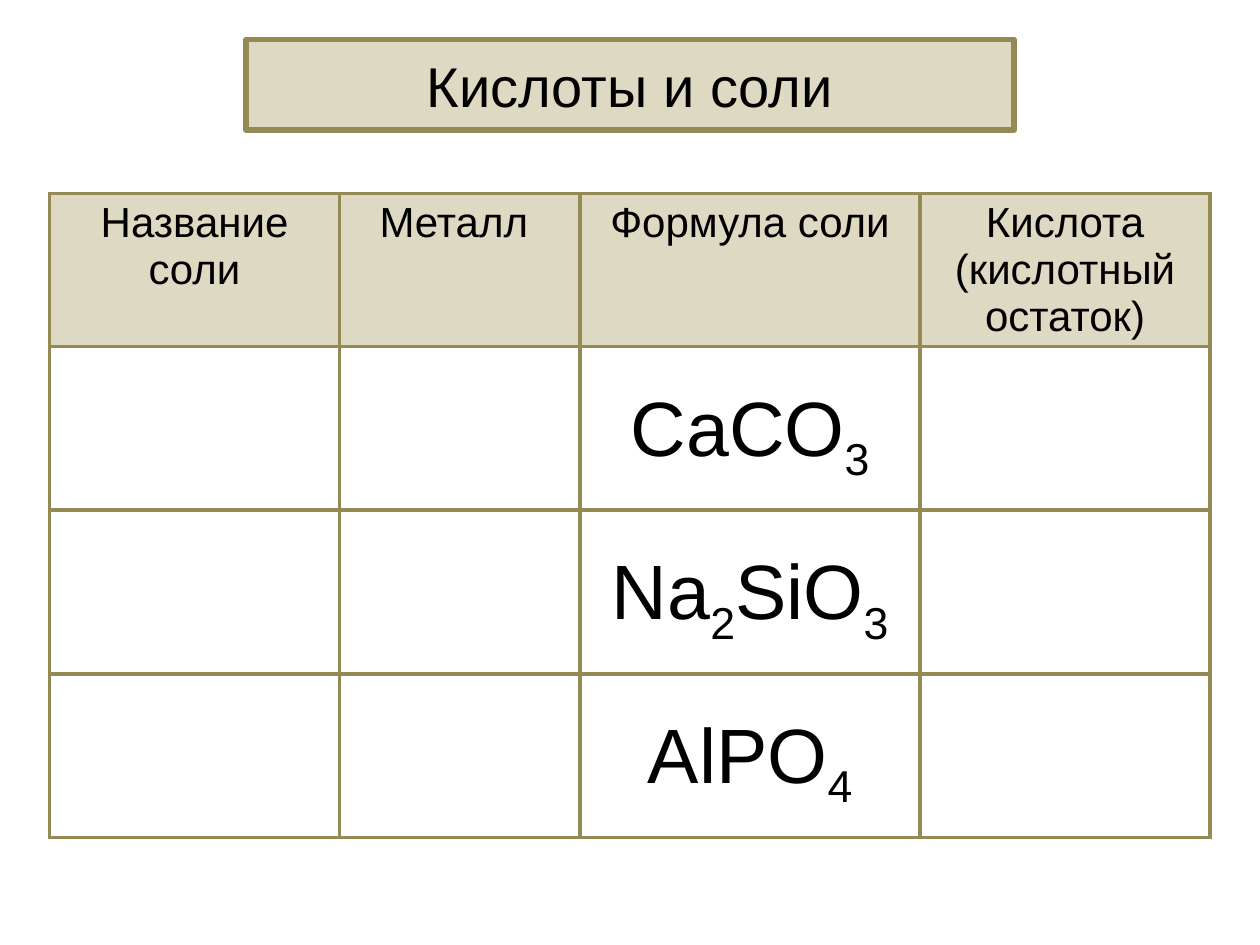
from itertools import groupby

from lxml.etree import SubElement
from pptx import Presentation
from pptx.dml.color import RGBColor
from pptx.enum.shapes import MSO_SHAPE
from pptx.enum.text import MSO_ANCHOR, PP_ALIGN
from pptx.oxml.ns import qn
from pptx.util import Pt

SAND = RGBColor(0xDD, 0xD9, 0xC3)
OLIVE = RGBColor(0x94, 0x8A, 0x54)
BLACK = RGBColor(0, 0, 0)
WHITE = RGBColor(0xFF, 0xFF, 0xFF)

HEADS = ["Название соли", "Металл ", "Формула соли", "Кислота (кислотный остаток)"]
SALTS = ["CaCO3", "Na2SiO3", "AlPO4"]
WIDTHS = [165.6, 137.5, 194.4, 165.6]
HEIGHTS = [87.5] + [93.6] * len(SALTS)
FORMULA = 2


class Board:
    font = "Arial"

    def __init__(self, slide):
        self.slide = slide

    def style(self, para, size):
        para.alignment = PP_ALIGN.CENTER
        for run in para.runs:
            run.font.name = self.font
            run.font.size = Pt(size)
            run.font.color.rgb = BLACK

    def title(self, text, left, top, width, height):
        box = self.slide.shapes.add_shape(
            MSO_SHAPE.ROUNDED_RECTANGLE, Pt(left), Pt(top), Pt(width), Pt(height))
        box.adjustments[0] = 0
        box.shadow.inherit = False
        box.fill.solid()
        box.fill.fore_color.rgb = SAND
        box.line.color.rgb = OLIVE
        box.line.width = Pt(3)
        frame = box.text_frame
        frame.text = text
        frame.vertical_anchor = MSO_ANCHOR.MIDDLE
        self.style(frame.paragraphs[0], 32)

    def table(self, left, top, widths, heights):
        table = self.slide.shapes.add_table(
            len(heights), len(widths), Pt(left), Pt(top),
            Pt(sum(widths)), Pt(sum(heights))).table
        for col, width in zip(table.columns, widths):
            col.width = Pt(width)
        for row, height in zip(table.rows, heights):
            row.height = Pt(height)
        for cell in table.iter_cells():
            self.border(cell)
            cell.fill.solid()
            cell.fill.fore_color.rgb = WHITE
        return table

    def border(self, cell):
        props = cell._tc.get_or_add_tcPr()
        for side in ("lnL", "lnR", "lnT", "lnB"):
            line = SubElement(props, qn(f"a:{side}"), w=str(Pt(2.25)))
            fill = SubElement(line, qn("a:solidFill"))
            SubElement(fill, qn("a:srgbClr"), val=str(OLIVE))

    def head(self, cell, text):
        cell.fill.fore_color.rgb = SAND
        cell.text_frame.text = text
        self.style(cell.text_frame.paragraphs[0], 24)

    def formula(self, cell, text):
        cell.vertical_anchor = MSO_ANCHOR.MIDDLE
        cell.margin_left = cell.margin_right = Pt(5)
        cell.margin_top = cell.margin_bottom = Pt(0)
        para = cell.text_frame.paragraphs[0]
        para.line_spacing = 1.15
        for low, chars in groupby(text, str.isdigit):
            run = para.add_run()
            run.text = "".join(chars)
            if low:
                run._r.get_or_add_rPr().set("baseline", "-25000")
        self.style(para, 44)


def main():
    deck = Presentation()
    deck.slide_width, deck.slide_height = Pt(720), Pt(540)
    board = Board(deck.slides.add_slide(deck.slide_layouts[6]))
    board.title("Кислоты и соли", 140.6, 22.5, 438.8, 51.8)
    table = board.table(28.35, 110.4, WIDTHS, HEIGHTS)
    for col, text in enumerate(HEADS):
        board.head(table.cell(0, col), text)
    for row, salt in enumerate(SALTS, 1):
        board.formula(table.cell(row, FORMULA), salt)
    deck.save("out.pptx")


if __name__ == "__main__":
    main()
